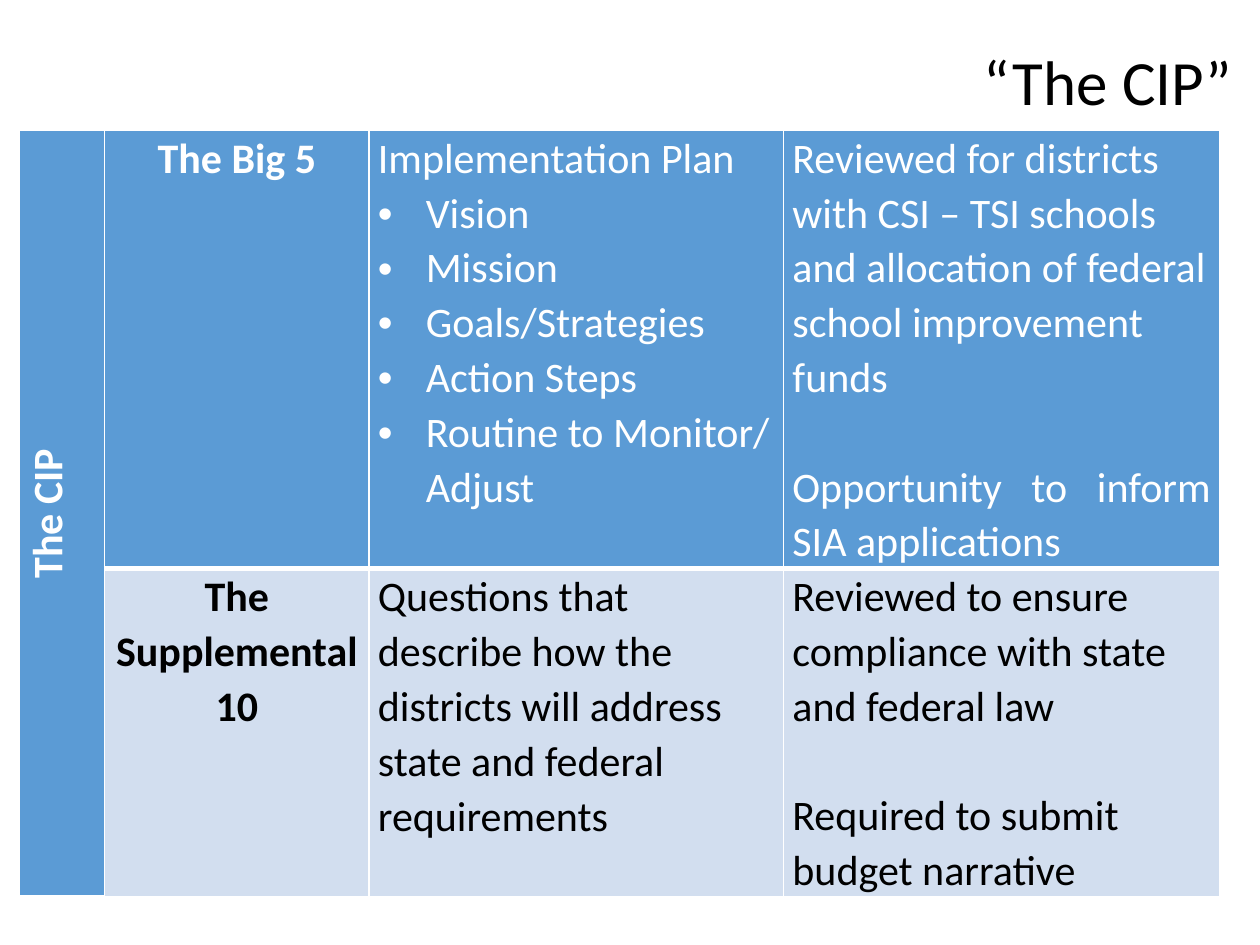
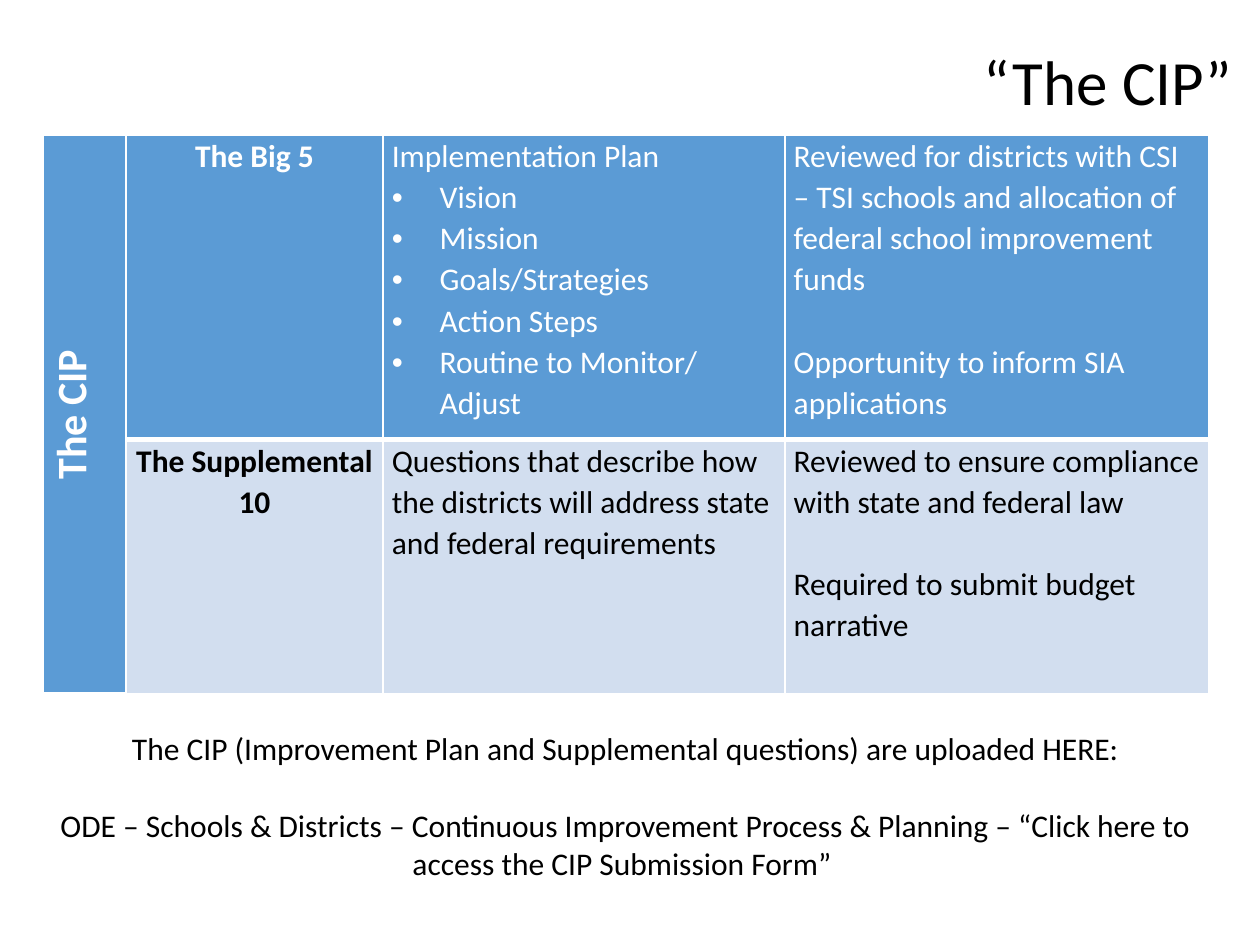
from dataclasses import dataclass

from lxml import etree
from pptx import Presentation
from pptx import util as u
from pptx.dml import color
from pptx.enum import text
from pptx.oxml import ns

Inches, Pt = u.Inches, u.Pt
Align = text.PP_ALIGN


@dataclass(frozen=True)
class Theme:
    font: str = "Calibri"
    ink: str = "000000"
    white: str = "FFFFFF"
    blue: str = "5B9BD5"
    pale: str = "D2DEEF"
    title_size: int = 36
    label_size: int = 24
    note_size: int = 18
    line_spacing: float = 1.07
    line_height: float = 1.22


@dataclass(frozen=True)
class Line:
    words: str
    align: Align = Align.LEFT
    bullet: bool = False
    gap: bool = False


THEME = Theme()
PLAN_PARTS = ["Vision", "Mission", "Goals/Strategies", "Action Steps",
              "Routine to Monitor/ Adjust"]


def style_paragraph(paragraph, size, ink, bold=False, align=Align.LEFT, spacing=1.0):
    paragraph.alignment = align
    paragraph.line_spacing = spacing
    for run in paragraph.runs:
        run.font.name = THEME.font
        run.font.size = Pt(size)
        run.font.bold = bold
        run.font.color.rgb = color.RGBColor.from_string(ink)


def add_bullet(paragraph):
    properties = paragraph._p.get_or_add_pPr()
    properties.set("marL", str(Inches(0.38)))
    properties.set("indent", str(Inches(-0.38)))
    etree.SubElement(properties, ns.qn("a:buFont"), typeface="Arial")
    etree.SubElement(properties, ns.qn("a:buChar"), char="•")


def write_lines(frame, lines, size, ink, bold=False, spacing=1.0):
    frame.text = "\n".join(line.words for line in lines)
    for paragraph, line in zip(frame.paragraphs, lines):
        style_paragraph(paragraph, size, ink, bold, line.align, spacing)
        if line.gap:
            paragraph.space_before = Pt(round(size * THEME.line_height * spacing, 1))
        if line.bullet:
            add_bullet(paragraph)


def set_borders(cell, bottom):
    properties = cell._tc.get_or_add_tcPr()
    for side, points in (("L", 1), ("R", 1), ("T", 1), ("B", bottom)):
        edge = etree.SubElement(properties, ns.qn(f"a:ln{side}"), w=str(Pt(points)))
        fill = etree.SubElement(edge, ns.qn("a:solidFill"))
        etree.SubElement(fill, ns.qn("a:srgbClr"), val=THEME.white)


def paint_cell(cell, fill, bottom):
    cell.margin_left = cell.margin_right = Inches(0.07)
    cell.margin_top = cell.margin_bottom = 0
    set_borders(cell, bottom)
    cell.fill.solid()
    cell.fill.fore_color.rgb = color.RGBColor.from_string(fill)


def add_title(slide, words):
    title = slide.shapes.title
    title.left, title.top = Inches(2.06), Inches(0.12)
    title.width, title.height = Inches(7.82), Inches(1.11)
    frame = title.text_frame
    frame.text = words
    frame.auto_size = text.MSO_AUTO_SIZE.NONE
    frame.vertical_anchor = text.MSO_ANCHOR.MIDDLE
    style_paragraph(frame.paragraphs[0], THEME.title_size, THEME.ink,
                    align=Align.RIGHT, spacing=0.9)


def cip_rows(opportunity_align):
    big_five = [
        [Line("The Big 5", Align.CENTER)],
        [Line("Implementation Plan")] + [Line(part, bullet=True) for part in PLAN_PARTS],
        [Line("Reviewed for districts with CSI – TSI schools and allocation of "
              "federal school improvement funds"),
         Line("Opportunity to inform SIA applications", opportunity_align, gap=True)],
    ]
    supplemental = [
        [Line("The Supplemental 10", Align.CENTER)],
        [Line("Questions that describe how the districts will address state and "
              "federal requirements")],
        [Line("Reviewed to ensure compliance with state and federal law"),
         Line("Required to submit budget narrative", gap=True)],
    ]
    return [big_five, supplemental]


def add_cip_table(slide, left, top, widths, heights, size, opportunity_align=Align.LEFT):
    table = slide.shapes.add_table(
        len(heights), len(widths), Inches(left), Inches(top),
        Inches(sum(widths)), Inches(sum(heights))).table
    for column, width in zip(table.columns, widths):
        column.width = Inches(width)
    for row, height in zip(table.rows, heights):
        row.height = Inches(height)

    label = table.cell(0, 0)
    label.merge(table.cell(1, 0))
    for row in range(2):
        paint_cell(table.cell(row, 0), THEME.blue, 3)
    label._tc.get_or_add_tcPr().set("vert", "vert270")
    write_lines(label.text_frame, [Line("The CIP", Align.CENTER)], THEME.label_size,
                THEME.white, True, THEME.line_spacing)

    looks = [(THEME.blue, THEME.white, 3), (THEME.pale, THEME.ink, 1)]
    for row, (entries, look) in enumerate(zip(cip_rows(opportunity_align), looks)):
        fill, ink, bottom = look
        for column, lines in enumerate(entries, start=1):
            cell = table.cell(row, column)
            paint_cell(cell, fill, bottom)
            write_lines(cell.text_frame, lines, size, ink, column == 1,
                        THEME.line_spacing)


def add_upload_note(slide):
    note = slide.shapes.add_textbox(Inches(0.34), Inches(5.74), Inches(9.25), Inches(1.31))
    frame = note.text_frame
    frame.word_wrap = True
    frame.auto_size = text.MSO_AUTO_SIZE.SHAPE_TO_FIT_TEXT
    write_lines(frame, [
        Line("The CIP (Improvement Plan and Supplemental questions) are uploaded HERE:",
             Align.CENTER),
        Line("ODE – Schools & Districts – Continuous Improvement Process & Planning – "
             "“Click here to access the CIP Submission Form” ", Align.CENTER, gap=True),
    ], THEME.note_size, THEME.ink)


def add_cip_slide(deck):
    slide = deck.slides.add_slide(deck.slide_layouts[5])
    add_title(slide, "“The CIP”")
    return slide


def main():
    deck = Presentation()
    deck.slide_width, deck.slide_height = Inches(10), Inches(7.5)

    overview = add_cip_slide(deck)
    add_cip_table(overview, 0.15, 1.03, [0.68, 2.1, 3.29, 3.46], [3.03, 2.53], 24,
                  Align.JUSTIFY)

    submission = add_cip_slide(deck)
    add_cip_table(submission, 0.34, 1.07, [0.66, 2.04, 3.19, 3.36], [2.42, 2.02], 18)
    add_upload_note(submission)

    deck.save("out.pptx")


if __name__ == "__main__":
    main()
